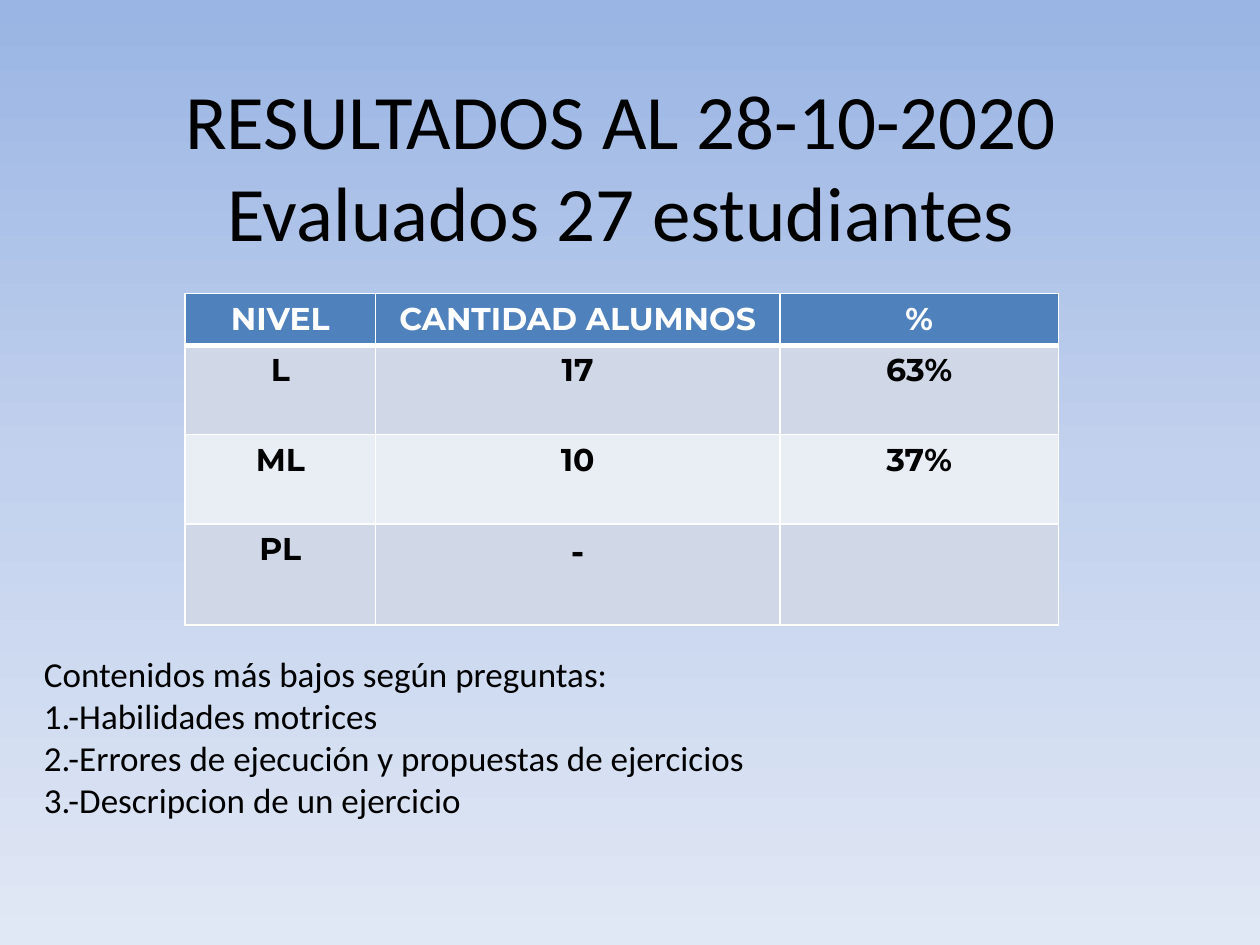
from copy import deepcopy

from lxml.etree import SubElement
from pptx import Presentation
from pptx.dml.color import RGBColor
from pptx.enum.text import MSO_ANCHOR, PP_ALIGN
from pptx.oxml.ns import qn
from pptx.util import Inches, Pt

COLORS = {
    "text": "000000", "header_text": "FFFFFF", "border": "FFFFFF",
    "header": "4F81BD", "odd_row": "D0D8E8", "even_row": "E9EDF4",
}
BACKGROUND = [(0, "9AB5E4"), (0.5, "C2D1ED"), (1, "E1E8F5")]

TITLE = ["RESULTADOS AL 28-10-2020\vEvaluados 27 estudiantes"]
RESULTS = [
    ("NIVEL", "CANTIDAD ALUMNOS", "%"),
    ("L", "17", "63%"),
    ("ML", "10", "37%"),
    ("PL", "-", ""),
]
COL_WIDTHS = [1.51, 3.21, 2.21]
ROW_HEIGHTS = [0.41, 0.71, 0.71, 0.8]
LOWEST_CONTENTS = [
    "Contenidos más bajos según preguntas:",
    "1.-Habilidades motrices",
    "2.-Errores de ejecución y propuestas de ejercicios",
    "3.-Descripcion de un ejercicio",
]

TITLE_FONT = {"name": "Calibri", "size": Pt(44)}
BODY_FONT = {"name": "Calibri", "size": Pt(20)}
TABLE_FONT = {"name": "Montserrat", "size": Pt(18), "bold": True}


def rgb(name):
    return RGBColor.from_string(COLORS[name])


def write(tf, lines, font, color, align):
    for i, line in enumerate(lines):
        p = tf.paragraphs[0] if i == 0 else tf.add_paragraph()
        p.text = line
        p.alignment = align
        for r in p.runs:
            for key, value in font.items():
                setattr(r.font, key, value)
            r.font.color.rgb = rgb(color)


def add_text(s, box, lines, font, align, anchor):
    tf = s.shapes.add_textbox(*map(Inches, box)).text_frame
    tf.word_wrap = True
    tf.vertical_anchor = anchor
    write(tf, lines, font, "text", align)


def set_background(s):
    fill = s.background.fill
    fill.gradient()
    fill.gradient_angle = 270  # counter-clockwise, so top to bottom
    stops = next(s.element.iter(qn("a:gsLst")))
    stops.insert(1, deepcopy(stops[0]))
    for stop, (position, color) in zip(fill.gradient_stops, BACKGROUND):
        stop.position = position
        stop.color.rgb = RGBColor.from_string(color)


def set_borders(cell, widths):
    """Draw the cell's sides; widths maps lnL, lnR, lnT, lnB to points."""
    tcPr = cell._tc.get_or_add_tcPr()
    for i, (side, width) in enumerate(widths.items()):
        ln = SubElement(tcPr, qn(f"a:{side}"), w=str(Pt(width)))
        fill = SubElement(ln, qn("a:solidFill"))
        SubElement(fill, qn("a:srgbClr"), val=COLORS["border"])
        tcPr.insert(i, ln)  # borders come before the fill


def add_results(s, left, top):
    size = Inches(sum(COL_WIDTHS)), Inches(sum(ROW_HEIGHTS))
    table = s.shapes.add_table(len(RESULTS), len(COL_WIDTHS),
                               Inches(left), Inches(top), *size).table
    for col, width in zip(table.columns, COL_WIDTHS):
        col.width = Inches(width)
    for i, (row, height, values) in enumerate(
            zip(table.rows, ROW_HEIGHTS, RESULTS)):
        row.height = Inches(height)
        header = i == 0
        fill = "header" if header else "odd_row" if i % 2 else "even_row"
        widths = {"lnL": 1, "lnR": 1, "lnT": 3 if i == 1 else 1,
                  "lnB": 3 if header else 1}
        for cell, value in zip(row.cells, values):
            cell.fill.solid()
            cell.fill.fore_color.rgb = rgb(fill)
            set_borders(cell, widths)
            font = TABLE_FONT | ({"size": Pt(20)} if value == "-" else {})
            write(cell.text_frame, [value], font,
                  "header_text" if header else "text", PP_ALIGN.CENTER)


prs = Presentation()
prs.slide_width, prs.slide_height = Inches(10), Inches(7.5)
s = prs.slides.add_slide(prs.slide_layouts[6])
set_background(s)
add_text(s, (0.43, 0.44, 9, 1.73), TITLE, TITLE_FONT,
         PP_ALIGN.CENTER, MSO_ANCHOR.MIDDLE)
add_results(s, 1.47, 2.33)
add_text(s, (0.25, 5.13, 9.37, 1.45), LOWEST_CONTENTS, BODY_FONT,
         PP_ALIGN.LEFT, MSO_ANCHOR.TOP)
prs.save("out.pptx")
